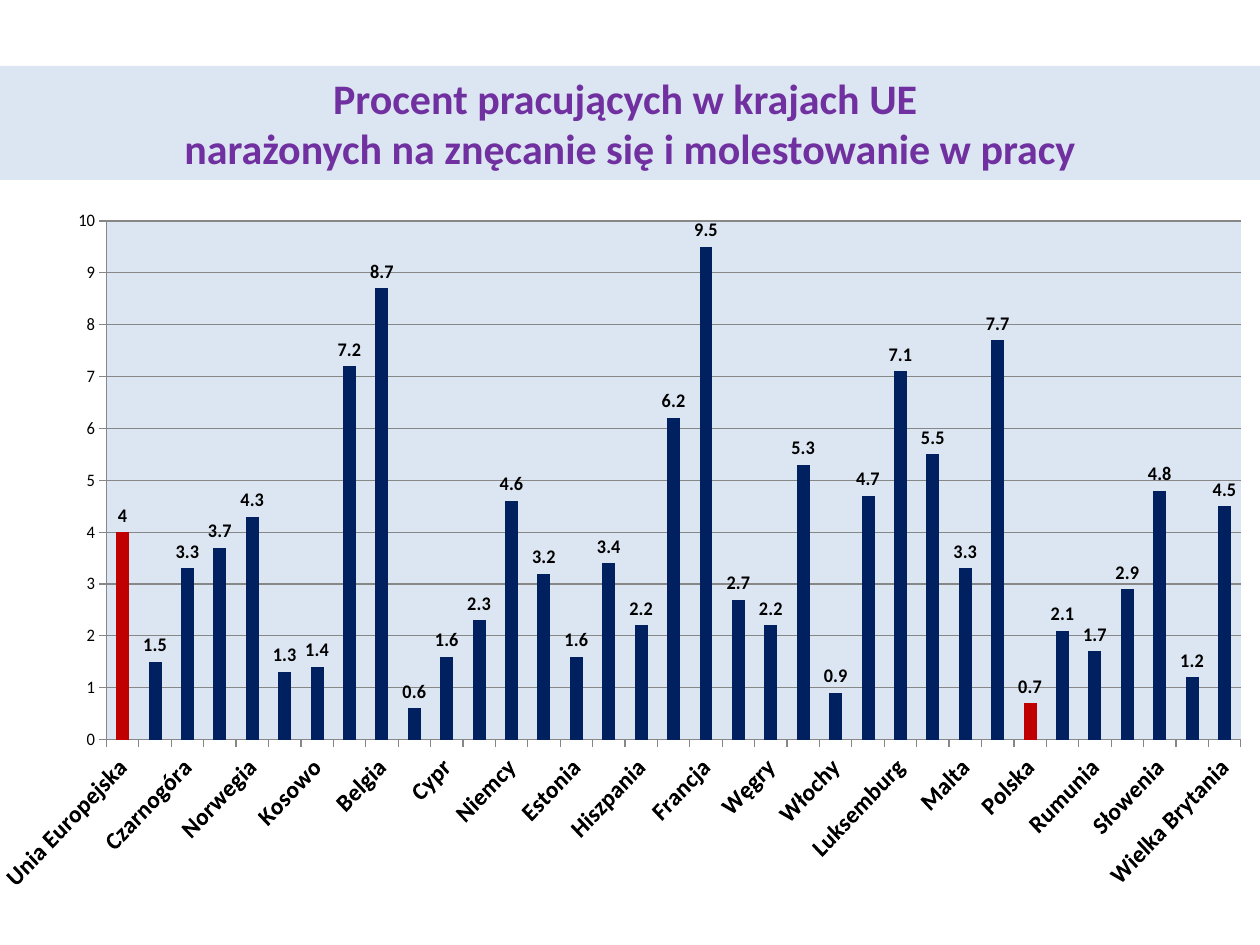
from lxml.etree import SubElement
from pptx import Presentation
from pptx.chart.data import CategoryChartData
from pptx.dml.color import RGBColor
from pptx.enum.chart import XL_CHART_TYPE, XL_LABEL_POSITION, XL_TICK_MARK
from pptx.enum.text import MSO_ANCHOR, PP_ALIGN
from pptx.oxml.ns import qn
from pptx.util import Pt

PX = 914400 // 126
COLORS = {"band": "DCE6F2", "title": "7030A0", "bar": "002060",
          "highlight": "C00000", "text": "000000", "line": "878787"}
TITLE = "Procent pracujących w krajach UE \vnarażonych na znęcanie się i molestowanie w pracy"
TITLE_BOX = (0, 66, 1260, 114)
CHART_BOX = (0, 204, 1260, 741)
PLOT_LAYOUT = {"x": 0.033, "y": 0.023, "w": 0.951, "h": 0.7}
HIGHLIGHTED = ("Unia Europejska", "Polska")
PERCENTAGES = {
    "Unia Europejska": 4, "Albania": 1.5, "Czarnogóra": 3.3, "Macedonia": 3.7,
    "Norwegia": 4.3, "Turcja": 1.3, "Kosowo": 1.4, "Austria": 7.2, "Belgia": 8.7,
    "Bułgaria": 0.6, "Cypr": 1.6, "Czechy": 2.3, "Niemcy": 4.6, "Dania": 3.2,
    "Estonia": 1.6, "Grecja": 3.4, "Hiszpania": 2.2, "Finlandia": 6.2,
    "Francja": 9.5, "Chorwacja": 2.7, "Węgry": 2.2, "Irlandia": 5.3,
    "Włochy": 0.9, "Litwa": 4.7, "Luksemburg": 7.1, "Łotwa": 5.5, "Malta": 3.3,
    "Holandia": 7.7, "Polska": 0.7, "Portugalia": 2.1, "Rumunia": 1.7,
    "Szwecja": 2.9, "Słowenia": 4.8, "Słowacja": 1.2, "Wielka Brytania": 4.5,
}


def set_attributes(target, **values):
    """Set every given value on the target."""
    for name, value in values.items():
        setattr(target, name, value)


def scale_box(box):
    """Turn a box in px into EMU."""
    return [length * PX for length in box]


def color(name):
    """Look up a named colour."""
    return RGBColor.from_string(COLORS[name])


def paint(fill, name):
    """Make a fill solid in a named colour."""
    fill.solid()
    fill.fore_color.rgb = color(name)


def format_font(font, size, bold, name="text"):
    """Set the slide's typeface with a size, weight and colour."""
    set_attributes(font, name="Calibri", size=Pt(size), bold=bold)
    font.color.rgb = color(name)


def add_title(slide):
    """Fill the title placeholder and turn it into a full-width band."""
    title = slide.shapes.title
    set_attributes(title, **dict(zip(("left", "top", "width", "height"), scale_box(TITLE_BOX))))
    paint(title.fill, "band")
    title.text_frame.text = TITLE
    set_attributes(title.text_frame, word_wrap=True, vertical_anchor=MSO_ANCHOR.MIDDLE)
    paragraph = title.text_frame.paragraphs[0]
    set_attributes(paragraph, alignment=PP_ALIGN.CENTER, line_spacing=1.0)
    for run in paragraph.runs:
        format_font(run.font, 24, True, "title")


def format_plot_area(chart):
    """Place the inner plot area and give it a background."""
    plot_area = chart.plots[0]._element.getparent()
    layout = plot_area.find(qn("c:layout"))
    if layout is None:
        layout = SubElement(plot_area, qn("c:layout"))
        plot_area.insert(0, layout)
    manual = SubElement(layout, qn("c:manualLayout"))
    settings = {"layoutTarget": "inner", "xMode": "edge", "yMode": "edge", **PLOT_LAYOUT}
    for name, value in settings.items():
        SubElement(manual, qn(f"c:{name}")).set("val", str(value))
    properties = SubElement(plot_area, qn("c:spPr"))
    solid = SubElement(properties, qn("a:solidFill"))
    SubElement(solid, qn("a:srgbClr")).set("val", COLORS["band"])


def format_axes(chart):
    """Format both axes and the gridlines."""
    category_axis, value_axis = chart.category_axis, chart.value_axis
    set_attributes(value_axis, minimum_scale=0, maximum_scale=10, major_unit=1,
                   has_major_gridlines=True)
    for axis, size, bold in ((category_axis, 14, True), (value_axis, 10, False)):
        set_attributes(axis, major_tick_mark=XL_TICK_MARK.OUTSIDE,
                       minor_tick_mark=XL_TICK_MARK.NONE)
        format_font(axis.tick_labels.font, size, bold)
        axis.format.line.color.rgb = color("line")
    value_axis.major_gridlines.format.line.color.rgb = color("line")
    text_body = category_axis._element.find(qn("c:txPr"))
    text_body.find(qn("a:bodyPr")).set("rot", "-2700000")


def format_columns(chart):
    """Colour the columns, highlight chosen ones and show their values."""
    plot = chart.plots[0]
    set_attributes(plot, gap_width=150, vary_by_categories=False)
    series = plot.series[0]
    series.invert_if_negative = False
    paint(series.format.fill, "bar")
    categories = list(PERCENTAGES)
    for category in HIGHLIGHTED:
        paint(series.points[categories.index(category)].format.fill, "highlight")
    labels = series.data_labels
    set_attributes(labels, show_value=True, position=XL_LABEL_POSITION.OUTSIDE_END)
    format_font(labels.font, 11, True)


def add_column_chart(slide):
    """Add the column chart of percentages by country."""
    data = CategoryChartData(number_format="General")
    data.categories = list(PERCENTAGES)
    data.add_series("Series 1", list(PERCENTAGES.values()))
    chart = slide.shapes.add_chart(XL_CHART_TYPE.COLUMN_CLUSTERED,
                                   *scale_box(CHART_BOX), data).chart
    set_attributes(chart, has_legend=False, has_title=False)
    format_font(chart.font, 10, False)
    format_plot_area(chart)
    format_axes(chart)
    format_columns(chart)


def main():
    """Build and save the slide."""
    presentation = Presentation()
    set_attributes(presentation, slide_width=1260 * PX, slide_height=945 * PX)
    slide = presentation.slides.add_slide(presentation.slide_layouts[5])
    add_title(slide)
    add_column_chart(slide)
    presentation.save("out.pptx")


if __name__ == "__main__":
    main()
